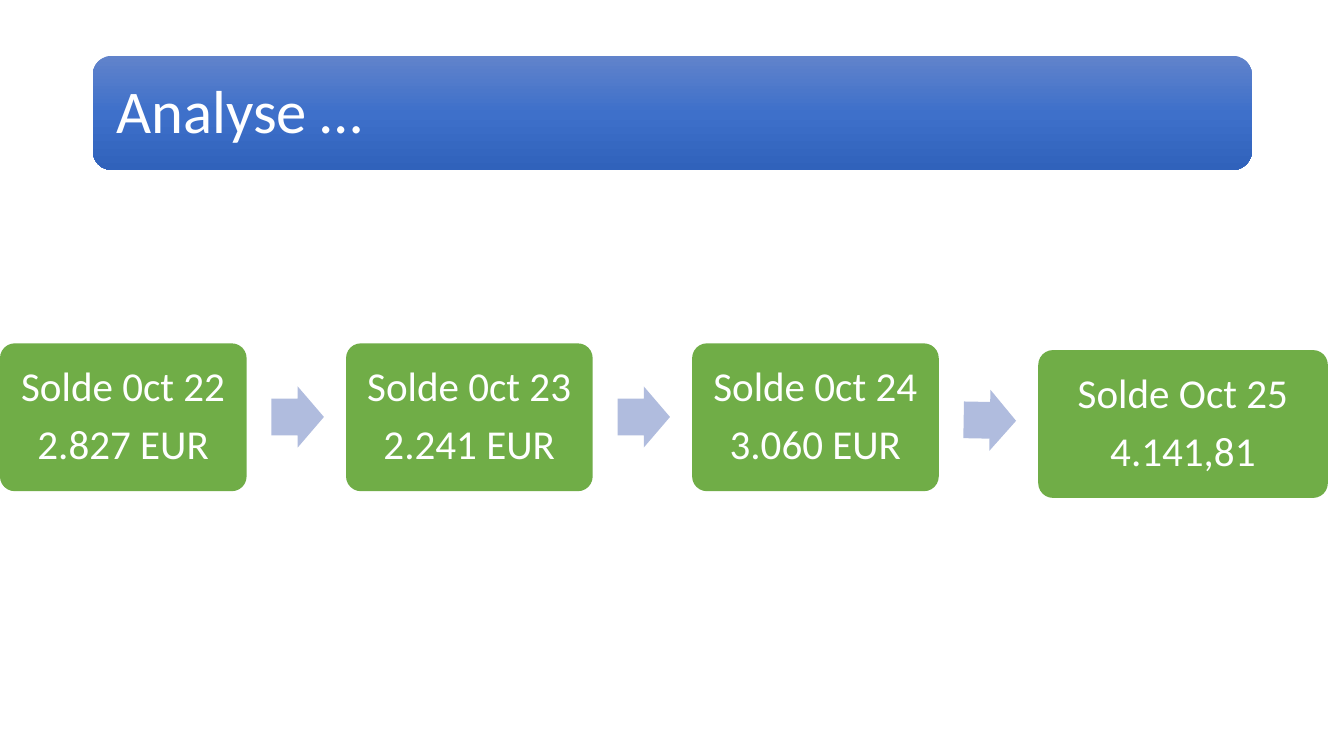
"""Build the balance analysis slide: a title band over four balance cards."""
from copy import deepcopy
from dataclasses import dataclass

from pptx import Presentation
from pptx.dml.color import RGBColor
from pptx.enum.shapes import MSO_SHAPE as Kind
from pptx.enum.text import MSO_ANCHOR as Anchor, MSO_AUTO_SIZE as Fit, PP_ALIGN as Align
from pptx.shapes.autoshape import Shape
from pptx.slide import Slide
from pptx.util import Pt

UNIT = 9144
PITCH = 515
FONT = "Calibri"
WHITE, GREEN, LILAC = "FFFFFF", "70AD47", "B0BCDE"
BLUES = ("6183CB", "3E70CA", "3062BB")


@dataclass
class Card:
    """A balance with its date, top and width."""
    date: str
    sum: str
    top: int = 511
    wide: int = 367


@dataclass
class Arrow:
    """A step between two cards."""
    top: int = 575
    turn: float = 0


CARDS = (
    Card("Solde 0ct 22", "2.827 EUR"),
    Card("Solde 0ct 23", "2.241 EUR"),
    Card("Solde 0ct 24", "3.060 EUR"),
    Card("Solde Oct 25", "4.141,81", 521, 431),
)
ARROWS = (Arrow(), Arrow(), Arrow(580, 1.1))


def px(num: int) -> int:
    """Turn px into EMU."""
    return num * UNIT


def color(code: str) -> RGBColor:
    """Turn a hex string into a colour."""
    return RGBColor.from_string(code)


def add_form(slide: Slide, kind: Kind, box: tuple[int, ...], *adjs: float) -> Shape:
    """Add a preset shape without line or shadow."""
    form = slide.shapes.add_shape(kind, *map(px, box))
    form.shadow.inherit = False
    form.line.fill.background()
    for i, adj in enumerate(adjs):
        form.adjustments[i] = adj
    return form


def paint(form: Shape, code: str) -> None:
    """Fill a shape with one colour."""
    form.fill.solid()
    form.fill.fore_color.rgb = color(code)


def write(form: Shape, text: str, size: int, inset: int, align: Align) -> None:
    """Set and format the text of a shape."""
    frame = form.text_frame
    frame.text = text
    frame.word_wrap = True
    frame.auto_size = Fit.NONE
    frame.vertical_anchor = Anchor.MIDDLE
    frame.margin_left = frame.margin_right = px(inset)
    frame.margin_top = frame.margin_bottom = px(inset)
    for para in frame.paragraphs:
        para.alignment = align
        para.line_spacing = 0.9
        para.space_before = Pt(0)
        para.space_after = Pt(round(size * 0.35))
        for run in para.runs:
            run.font.name = FONT
            run.font.size = Pt(size)
            run.font.color.rgb = color(WHITE)


def add_title(slide: Slide, text: str) -> None:
    """Draw the shaded band and lay the title over it."""
    band = add_form(slide, Kind.ROUNDED_RECTANGLE, (138, 83, 1725, 170))
    band.fill.gradient()
    band.fill.gradient_angle = 270
    first = band.fill.gradient_stops[0]._gs
    first.addnext(deepcopy(first))
    for i, (stop, code) in enumerate(zip(band.fill.gradient_stops, BLUES)):
        stop.color.rgb = color(code)
        stop.position = i / 2
    title = slide.shapes.title
    title.left, title.top, title.width, title.height = map(px, (146, 92, 1708, 154))
    write(title, text, 65, 27, Align.LEFT)
    band._element.addnext(title._element)


def add_card(slide: Slide, card: Card, left: int) -> None:
    """Draw a balance card."""
    box = (left, card.top, card.wide, 220)
    form = add_form(slide, Kind.ROUNDED_RECTANGLE, box, 0.1)
    paint(form, GREEN)
    write(form, f"{card.date}\n{card.sum}", 44, 18, Align.CENTER)


def add_arrow(slide: Slide, arrow: Arrow, left: int) -> None:
    """Draw an arrow between two cards."""
    form = add_form(slide, Kind.RIGHT_ARROW, (left, arrow.top, 78, 91), 0.6, 0.5)
    form.rotation = arrow.turn
    paint(form, LILAC)


def main() -> None:
    """Build and save the slide."""
    deck = Presentation()
    deck.slide_width, deck.slide_height = px(2000), px(1125)
    slide = deck.slides.add_slide(deck.slide_layouts[5])
    add_title(slide, "Analyse …")
    for i, card in enumerate(CARDS):
        add_card(slide, card, i * PITCH)
    for i, arrow in enumerate(ARROWS):
        add_arrow(slide, arrow, 404 + i * PITCH)
    deck.save("out.pptx")


if __name__ == "__main__":
    main()
